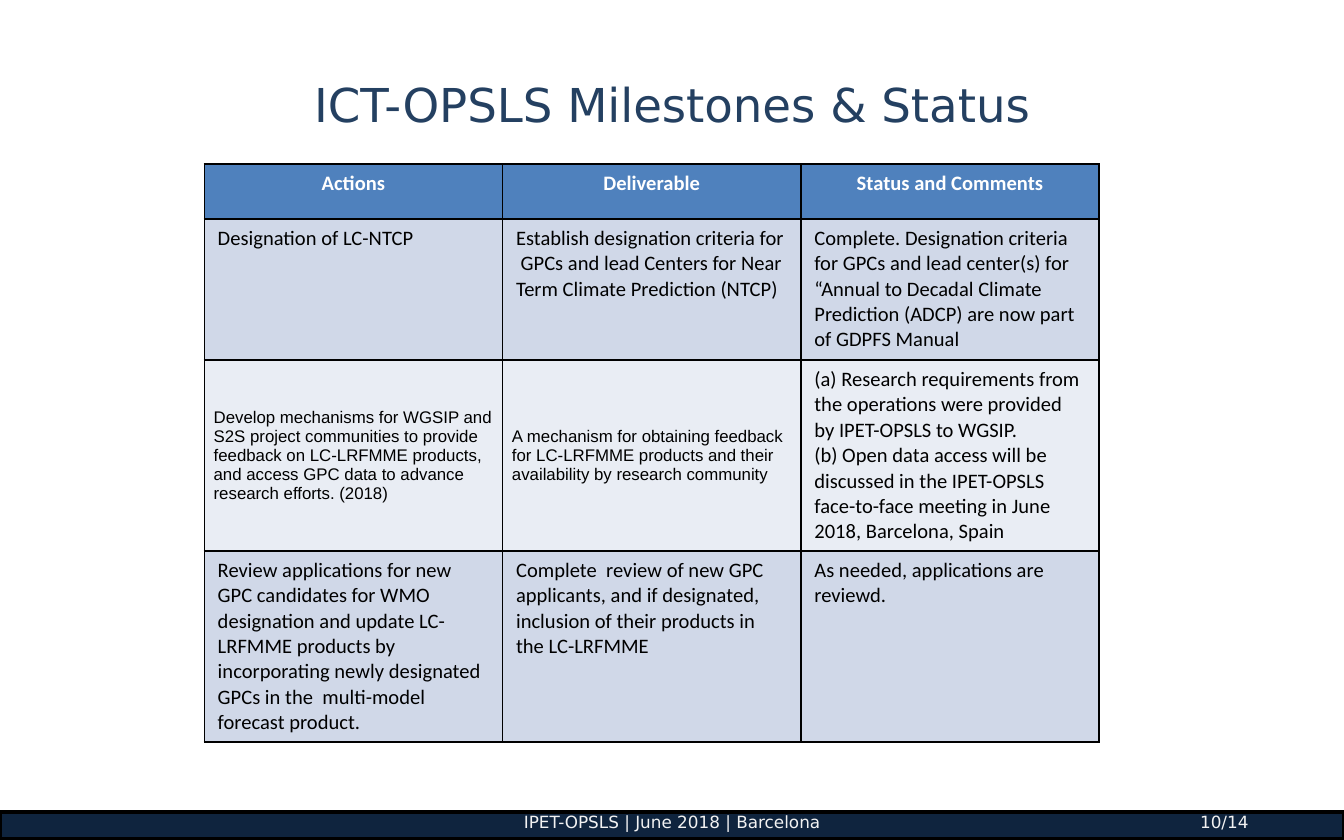
from lxml.etree import SubElement as Sub
from pptx import Presentation
from pptx.dml.color import RGBColor
from pptx.enum.shapes import MSO_SHAPE as Shape
from pptx.enum.text import MSO_ANCHOR as Anchor, MSO_AUTO_SIZE as Fit, PP_ALIGN as Align
from pptx.oxml.ns import qn
from pptx.util import Inches, Pt

WIDE, HIGH = 10, 6.25
TITLE = "ICT-OPSLS Milestones & Status"
FOOT = ["", "IPET-OPSLS | June 2018 | Barcelona", "10/14"]
STOPS = [("ctr", 4.92), ("r", 9.21)]
ROWS = [
    ("Actions", "Deliverable", "Status and Comments"),
    ("Designation of LC-NTCP",
     "Establish designation criteria for  GPCs and lead Centers for Near Term "
     "Climate Prediction (NTCP)",
     "Complete. Designation criteria for GPCs and lead center(s) for “Annual to "
     "Decadal Climate Prediction (ADCP) are now part of GDPFS Manual"),
    ("Develop mechanisms for WGSIP and S2S project communities to provide feedback "
     "on LC-LRFMME products, and access GPC data to advance research efforts. (2018)",
     "A mechanism for obtaining feedback for LC-LRFMME products and their "
     "availability by research community",
     "(a) Research requirements from the operations were provided by IPET-OPSLS to WGSIP.\n"
     "(b) Open data access will be discussed in the IPET-OPSLS face-to-face meeting "
     "in June 2018, Barcelona, Spain"),
    ("Review applications for new GPC candidates for WMO designation and update "
     "LC-LRFMME products by incorporating newly designated GPCs in the  multi-model "
     "forecast product.",
     "Complete  review of new GPC applicants, and if designated, inclusion of their "
     "products in the LC-LRFMME",
     "As needed, applications are reviewd."),
]
TALL = [0.41, 1.05, 1.42, 1.42]
FILLS = ["4F81BD", "D0D8E8", "E9EDF4", "D0D8E8"]
SMALL = {(2, 0), (2, 1)}


def paint(fill, tint):
    """Fill with a solid hex colour."""
    fill.solid()
    fill.fore_color.rgb = RGBColor.from_string(tint)


def style(frame, face, size, tint, bold=False, align=Align.LEFT):
    """Format every paragraph and run of a text frame."""
    for para in frame.paragraphs:
        para.alignment = align
        for run in para.runs:
            font = run.font
            font.name, font.size, font.bold = face, Pt(size), bold
            paint(font.fill, tint)


def pad(item, side, top):
    """Set equal insets on opposite sides."""
    item.margin_left = item.margin_right = Inches(side)
    item.margin_top = item.margin_bottom = Inches(top)


def edge(cell):
    """Draw thin black borders round a table cell."""
    props = cell._tc.get_or_add_tcPr()
    for side in "LRTB":
        line = Sub(props, qn("a:ln" + side), w=str(Pt(1)))
        Sub(Sub(line, qn("a:solidFill")), qn("a:srgbClr"), val="000000")


def add_title(slide):
    """Place and format the slide title."""
    title = slide.shapes.title
    title.left, title.top = Inches(0.5), Inches(0.25)
    title.width, title.height = Inches(WIDE - 1), Inches(1.04)
    frame = title.text_frame
    frame.text = TITLE
    frame.auto_size, frame.vertical_anchor = Fit.NONE, Anchor.MIDDLE
    pad(frame, 0.1, 0.1)
    style(frame, "DejaVu Sans", 25, "244061", align=Align.CENTER)


def add_foot(slide):
    """Draw the footer bar and its tabbed text."""
    bar = slide.shapes.add_shape(
        Shape.RECTANGLE, 0, Inches(6.04), Inches(WIDE), Inches(0.2))
    bar.shadow.inherit = False
    paint(bar.fill, "0F243E")
    paint(bar.line.fill, "000000")
    bar.line.width = Pt(2)
    box = slide.shapes.add_textbox(0, Inches(6), Inches(WIDE), Inches(0.25))
    frame = box.text_frame
    frame.word_wrap = True
    pad(frame, 0.08, 0.04)
    frame.text = "\t".join(FOOT)
    style(frame, "DejaVu Sans", 9, "F2F2F2")
    tabs = Sub(frame.paragraphs[0]._p.get_or_add_pPr(), qn("a:tabLst"))
    for kind, place in STOPS:
        Sub(tabs, qn("a:tab"), pos=str(Inches(place)), algn=kind)


def add_grid(slide):
    """Build the milestone table."""
    grid = slide.shapes.add_table(
        len(ROWS), len(ROWS[0]), Inches(1.52), Inches(1.22),
        Inches(6.66), Inches(sum(TALL))).table
    for r, texts in enumerate(ROWS):
        grid.rows[r].height = Inches(TALL[r])
        for c, text in enumerate(texts):
            cell = grid.cell(r, c)
            frame = cell.text_frame
            frame.text = text
            edge(cell)
            paint(cell.fill, FILLS[r])
            if (r, c) in SMALL:
                pad(cell, 0.07, 0)
                cell.vertical_anchor = Anchor.MIDDLE
                style(frame, "Arial", 9, "000000")
            elif r == 0:
                style(frame, "Calibri", 11, "FFFFFF", True, Align.CENTER)
            else:
                style(frame, "Calibri", 11, "000000")


def main():
    """Build and save the slide."""
    deck = Presentation()
    deck.slide_width, deck.slide_height = Inches(WIDE), Inches(HIGH)
    slide = deck.slides.add_slide(deck.slide_layouts[5])
    add_foot(slide)
    add_title(slide)
    add_grid(slide)
    deck.save("out.pptx")


if __name__ == "__main__":
    main()
